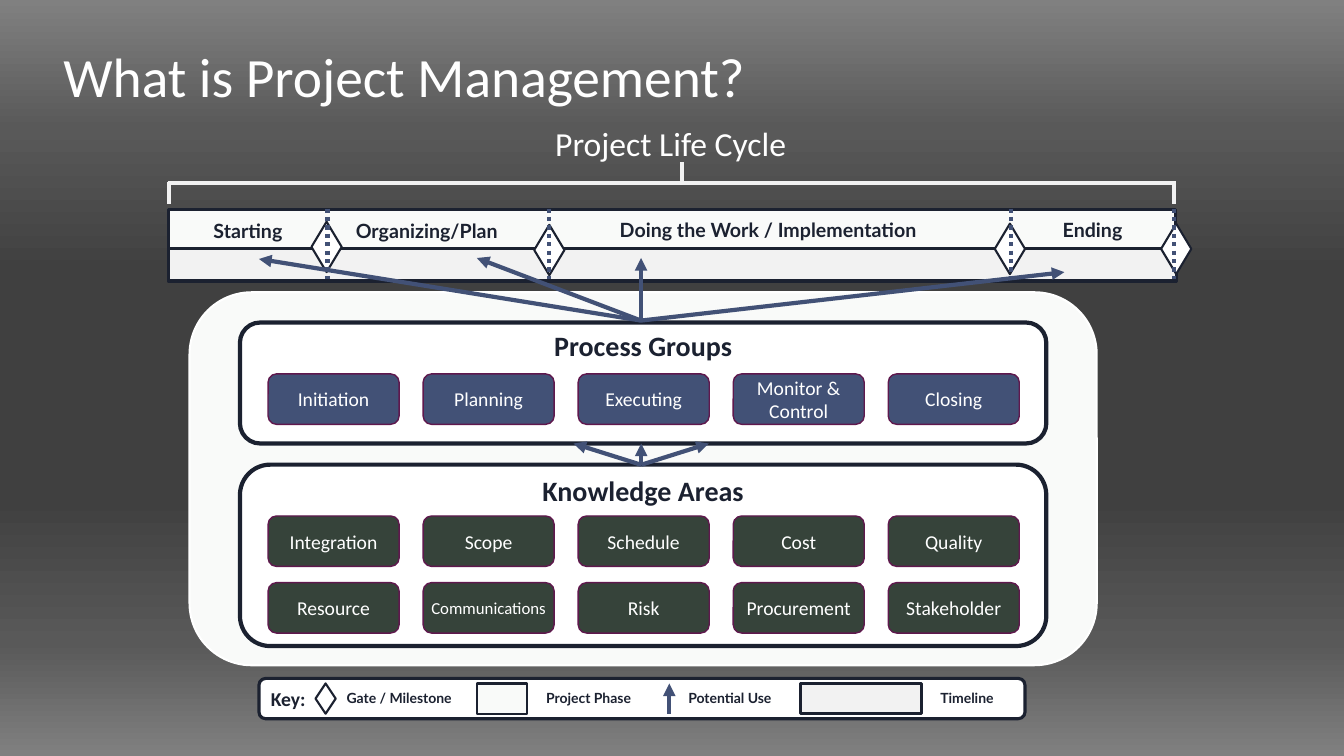
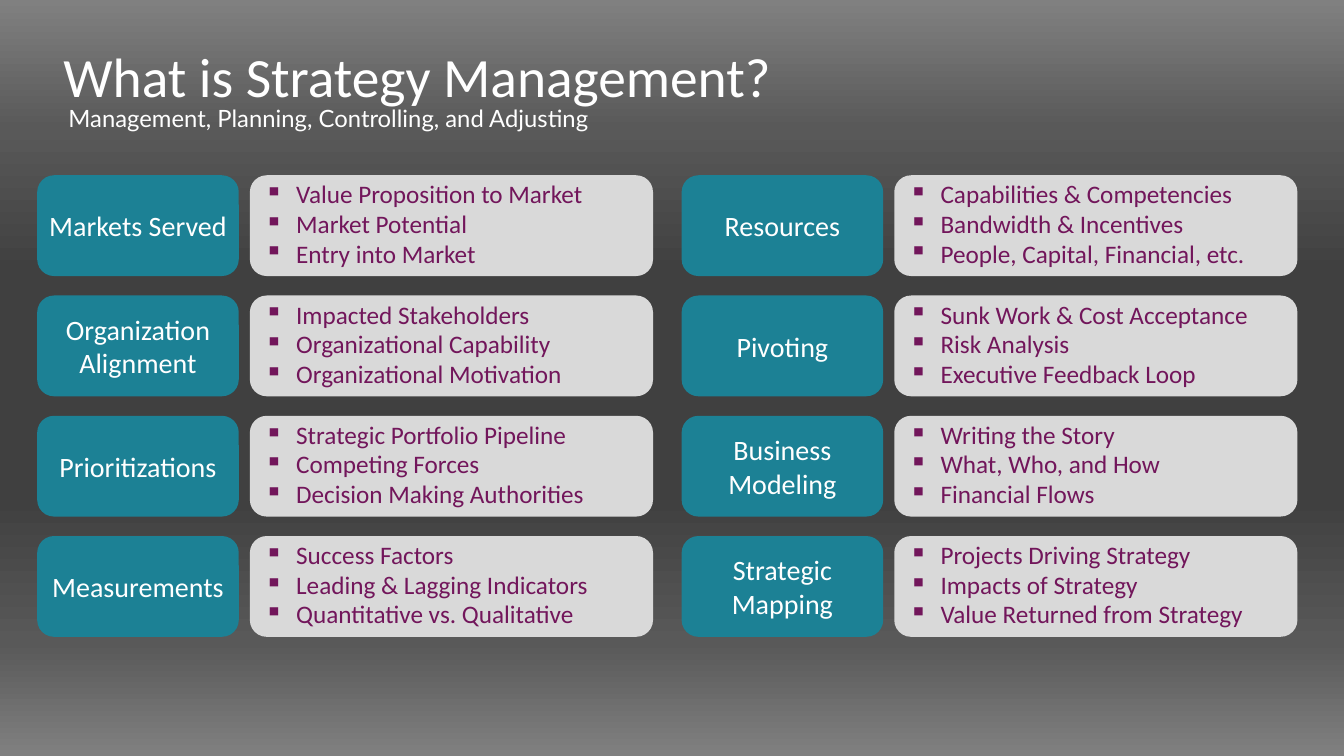
import lxml.etree
import pptx
import pptx.dml.color
import pptx.enum.dml
import pptx.enum.shapes
import pptx.enum.text
import pptx.oxml.ns
import pptx.util

Pt = pptx.util.Pt
qn = pptx.oxml.ns.qn
SHAPE = pptx.enum.shapes.MSO_SHAPE
ALIGN = pptx.enum.text.PP_ALIGN
ANCHOR = pptx.enum.text.MSO_ANCHOR

COLORS = {
    "white": "FFFFFF",
    "paper": "F9FAF9",
    "mist": "F2F2F2",
    "silver": "D9D9D9",
    "ink": "1B2130",
    "blue": "425176",
    "forest": "36433A",
    "wine": "5F184D",
    "plum": "72165B",
    "teal": "1C8195",
}
BACKDROP = [(0, "808080"), (17, "595959"), (36, "404040"),
            (66, "404040"), (85, "595959"), (100, "808080")]


def rgb(name):
    return pptx.dml.color.RGBColor.from_string(COLORS[name])


def apply(target, values):
    for name, value in values.items():
        setattr(target, name, value)


def add_child(parent, tag, **attributes):
    return lxml.etree.SubElement(parent, qn(tag), attributes)


class Deck:
    def __init__(self):
        self.presentation = pptx.Presentation()
        apply(self.presentation, {"slide_width": Pt(960), "slide_height": Pt(540)})
        self.slide = None
        self.paint_backdrop()

    def paint_backdrop(self):
        master = self.presentation.slide_master
        fill = master.background.fill
        fill.gradient()
        fill.gradient_angle = 270
        stops = master.element.find(".//" + qn("a:gsLst"))
        for stop in list(stops):
            stops.remove(stop)
        for position, color in BACKDROP:
            stop = add_child(stops, "a:gs", pos=str(position * 1000))
            add_child(stop, "a:srgbClr", val=color)

    def new_slide(self, title):
        self.slide = self.presentation.slides.add_slide(self.presentation.slide_layouts[6])
        self.label(title, 38.2, 25.2, 792, 57.6, size=39.6)

    def set_text(self, shape, lines, size=14, color="white", font="Calibri", bold=False,
                 align=ALIGN.CENTER, anchor=ANCHOR.MIDDLE, insets=(7.2, 3.6, 7.2, 3.6),
                 wrap=True, spacing=None, bullet=None):
        frame = shape.text_frame
        left, top, right, bottom = map(Pt, insets)
        apply(frame, {"word_wrap": wrap, "vertical_anchor": anchor,
                      "margin_left": left, "margin_top": top,
                      "margin_right": right, "margin_bottom": bottom})
        for index, line in enumerate(lines):
            paragraph = frame.add_paragraph() if index else frame.paragraphs[0]
            if bullet:
                properties = paragraph._p.get_or_add_pPr()
                properties.set("marL", str(Pt(22.5)))
                properties.set("indent", str(-Pt(22.5)))
                add_child(properties, "a:buChar", char=bullet)
            apply(paragraph, {"alignment": align, "line_spacing": spacing})
            run = paragraph.add_run()
            run.text = line
            apply(run.font, {"size": Pt(size), "name": font, "bold": bold})
            run.font.color.rgb = rgb(color)

    def label(self, text, left, top, width, height, align=ALIGN.LEFT, **style):
        box = self.slide.shapes.add_textbox(Pt(left), Pt(top), Pt(width), Pt(height))
        self.set_text(box, [text], align=align, **style)

    def box(self, kind, left, top, width, height, fill, line=None, weight=1):
        shape = self.slide.shapes.add_shape(kind, Pt(left), Pt(top), Pt(width), Pt(height))
        shape.shadow.inherit = False
        shape.fill.solid()
        shape.fill.fore_color.rgb = rgb(fill)
        if line:
            shape.line.color.rgb = rgb(line)
            shape.line.width = Pt(weight)
        else:
            shape.line.fill.background()
        return shape

    def gate(self, left, top, width, height):
        self.box(SHAPE.FLOWCHART_DECISION, left, top, width, height, "white", "ink", 1.5)

    def panel(self, title, top, height):
        shape = self.box(SHAPE.ROUNDED_RECTANGLE, 171.4, top, 576, height, "white", "ink", 3)
        self.set_text(shape, [title], size=20, color="ink", bold=True,
                      anchor=ANCHOR.TOP, insets=(7.2, 0, 7.2, 3.6))

    def chips(self, names, top, fill):
        for column, name in enumerate(names):
            shape = self.box(SHAPE.ROUNDED_RECTANGLE, 191.5 + column * 110.75, top,
                             93.6, 36, fill, "wine")
            long_name = len(name) > 12 and " " not in name
            style = {"size": 12, "insets": (0, 3.6, 0, 3.6)} if long_name else {}
            self.set_text(shape, [name], **style)

    def line(self, start, end, color, dash=None, arrow=False):
        connector = self.slide.shapes.add_connector(
            pptx.enum.shapes.MSO_CONNECTOR.STRAIGHT, *map(Pt, start + end))
        connector.line.color.rgb = rgb(color)
        connector.line.width = Pt(3)
        if dash:
            connector.line.dash_style = dash
        properties = connector.element.spPr
        if arrow:
            add_child(properties.find(qn("a:ln")), "a:tailEnd", type="triangle")
        add_child(properties, "a:effectLst")

    def arrow(self, start, end):
        self.line(start, end, "blue", arrow=True)

    def card(self, heading, points, left, top):
        shape = self.box(SHAPE.ROUNDED_RECTANGLE, left, top, 144, 72, "teal")
        self.set_text(shape, [heading], size=20, insets=(0, 0, 0, 0))
        shape = self.box(SHAPE.ROUNDED_RECTANGLE, left + 151.9, top, 288, 72, "silver")
        self.set_text(shape, points, size=18, color="plum", align=ALIGN.LEFT,
                      anchor=ANCHOR.TOP, insets=(7.2, 0, 7.2, 3.6), spacing=0.98, bullet="▪")


def draw_life_cycle(deck):
    deck.label("Project Life Cycle", 389.5, 84.2, 181.4, 36, size=24,
               anchor=ANCHOR.TOP, wrap=False)
    bracket = [((120.2, 131), (840.2, 131)), ((121, 130.3), (121, 145.4)),
               ((838.8, 130.3), (838.8, 145.4)), ((487.4, 116), (487.4, 131))]
    for start, end in bracket:
        deck.line(start, end, "mist")
    deck.box(SHAPE.RECTANGLE, 120.2, 149.8, 719.3, 28.8, "paper", "ink", 2.25)
    deck.box(SHAPE.RECTANGLE, 120.2, 177.8, 720, 23, "mist", "ink", 2.25)
    phases = [
        ("Starting", 121, 150.5, 112.3, 222.5, 158.4, 234),
        ("Organizing/Plan", 234, 150.5, 141.8, 381.6, 160.6, 392.4),
        ("Doing the Work / Implementation", 376.6, 149.8, 344.2, 710.6, 159.8, 722.2),
        ("Ending", 720.7, 149.8, 119.5, 829.4, 159.8, 838.8),
    ]
    for name, left, top, width, gate_left, gate_top, finish in phases:
        deck.label(name, left, top, width, 28.8, align=ALIGN.CENTER,
                   color="ink", font="Lato", bold=True)
        deck.gate(gate_left, gate_top, 21.6, 36)
        deck.line((finish, 149), (finish, 199.4), "blue",
                  dash=pptx.enum.dml.MSO_LINE.ROUND_DOT)


def draw_key(deck):
    top, height = 488.2, 21.6
    frame = deck.box(SHAPE.ROUNDED_RECTANGLE, 185, 484.6, 547.2, 28.8, "white", "ink", 2.25)
    deck.set_text(frame, ["Key:"], color="ink", bold=True, align=ALIGN.LEFT)
    deck.gate(225.4, top, 14.4, height)
    deck.box(SHAPE.RECTANGLE, 340.6, top, 36, height, "paper", "ink", 1.5)
    deck.arrow((478.1, top + height), (478.1, top))
    deck.box(SHAPE.RECTANGLE, 571.7, top, 86.4, height, "mist", "ink", 2.25)
    for text, left, width in [("Gate / Milestone", 240.5, 100.8), ("Project Phase", 383, 86.4),
                              ("Potential Use", 484.6, 79.2), ("Timeline", 664.6, 61.9)]:
        deck.label(text, left, 488.9, width, 19.4, size=10, color="ink", font="Lato", bold=True)


def project_slide(deck):
    deck.new_slide("What is Project Management?")
    deck.box(SHAPE.ROUNDED_RECTANGLE, 135.4, 208.8, 648, 266.4, "paper", "white", 1.5)
    deck.panel("Knowledge Areas", 331.9, 129.6)
    draw_life_cycle(deck)
    deck.panel("Process Groups", 230.4, 86.4)
    deck.chips(["Initiation", "Planning", "Executing", "Monitor & Control", "Closing"],
               267.1, "blue")
    for end in [(185, 185), (340.6, 184.3), (457.9, 184.3), (760.3, 194.4)]:
        deck.arrow((457.9, 229), end)
    deck.chips(["Integration", "Scope", "Schedule", "Cost", "Quality"], 368.6, "forest")
    deck.chips(["Resource", "Communications", "Risk", "Procurement", "Stakeholder"],
               416.2, "forest")
    for offset in (-48.3, 0, 48.3):
        deck.arrow((458, 332), (458 + offset, 316.8))
    draw_key(deck)


def strategy_slide(deck):
    deck.new_slide("What is Strategy Management?")
    deck.label("Management, Planning, Controlling, and Adjusting", 41.8, 68.4, 883.4, 29.5,
               size=17, font="Lato", anchor=ANCHOR.TOP, spacing=1.1)
    columns = [
        (26.6, [
            ("Markets Served",
             ["Value Proposition to Market", "Market Potential", "Entry into Market"]),
            ("Organization Alignment",
             ["Impacted Stakeholders", "Organizational Capability", "Organizational Motivation"]),
            ("Prioritizations",
             ["Strategic Portfolio Pipeline", "Competing Forces", "Decision Making Authorities"]),
            ("Measurements",
             ["Success Factors", "Leading & Lagging Indicators", "Quantitative vs. Qualitative"]),
        ]),
        (486.9, [
            ("Resources",
             ["Capabilities & Competencies", "Bandwidth & Incentives",
              "People, Capital, Financial, etc."]),
            ("Pivoting",
             ["Sunk Work & Cost Acceptance", "Risk Analysis", "Executive Feedback Loop"]),
            ("Business Modeling",
             ["Writing the Story", "What, Who, and How", "Financial Flows"]),
            ("Strategic Mapping",
             ["Projects Driving Strategy", "Impacts of Strategy", "Value Returned from Strategy"]),
        ]),
    ]
    for left, cards in columns:
        for row, (heading, points) in enumerate(cards):
            deck.card(heading, points, left, 125.2 + row * 85.9)


def main():
    deck = Deck()
    project_slide(deck)
    strategy_slide(deck)
    deck.presentation.save("out.pptx")


if __name__ == "__main__":
    main()
